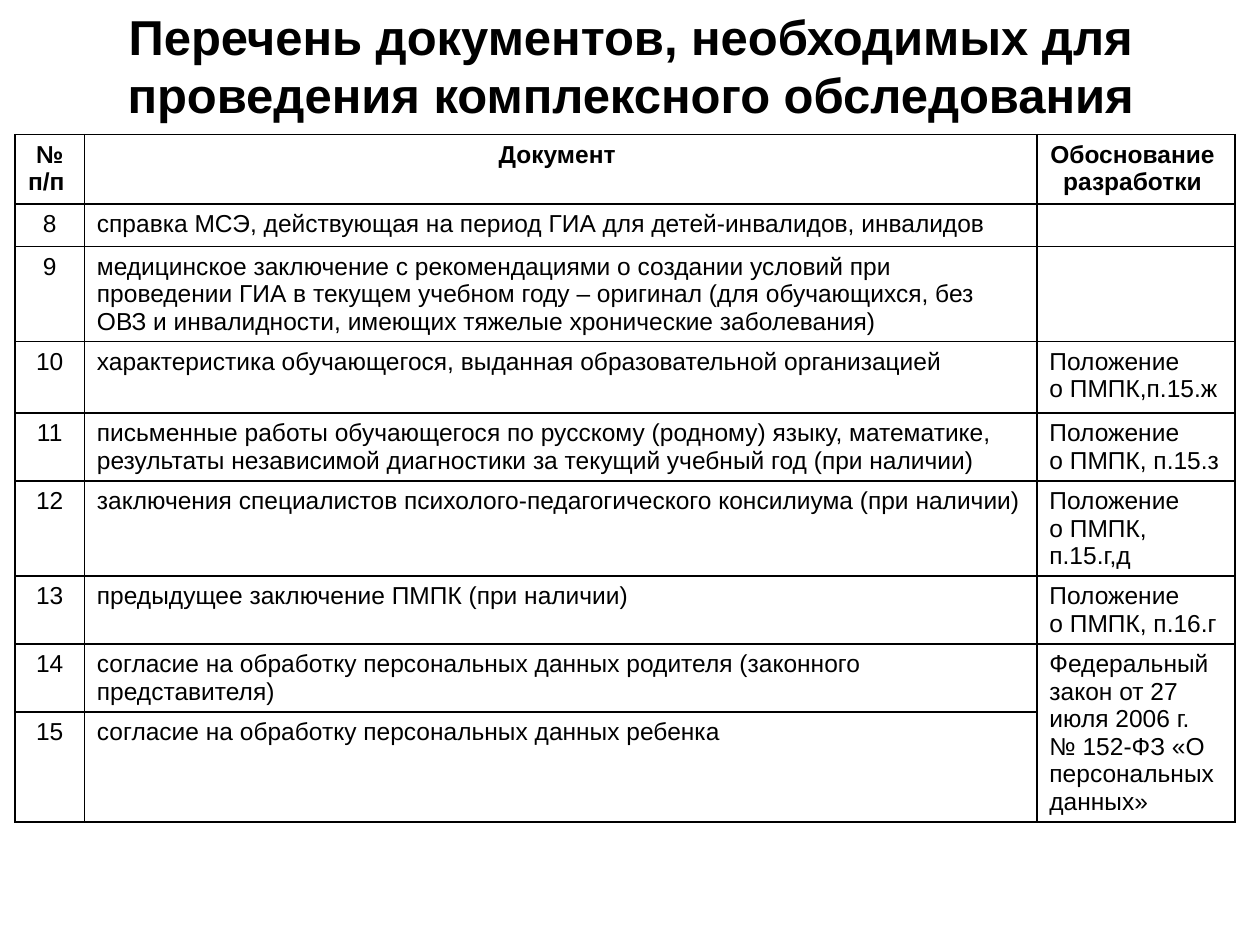
"""Build a slide listing the documents required for a comprehensive examination."""
from dataclasses import dataclass

from lxml import etree
from pptx import Presentation
from pptx.dml.color import RGBColor
from pptx.enum.text import MSO_ANCHOR, PP_ALIGN
from pptx.oxml.ns import qn
from pptx.util import Pt

CENTER, LEFT = PP_ALIGN.CENTER, PP_ALIGN.LEFT
MIDDLE = MSO_ANCHOR.MIDDLE
COLORS = {"text": "000000", "border": "000000", "fill": "FFFFFF"}
FONT = "Arial"
TITLE_SIZE, TABLE_SIZE = 28, 14
TITLE = "Перечень документов, необходимых для проведения комплексного обследования"
COLUMN_WIDTHS = (39.6, 544.3, 113.3)
TABLE_LEFT, TABLE_TOP = 8.6, 77


@dataclass
class Row:
    """Hold the texts and the height of one table row."""
    number: str
    document: str
    basis: str
    height: float
    header: bool = False


ROWS = [
    Row("№ п/п ", "Документ ", "Обоснование \nразработки ", 39.6, True),
    Row("8", "справка МСЭ, действующая на период ГИА для детей-инвалидов, инвалидов", "", 23.2),
    Row("9", "медицинское заключение с рекомендациями о создании условий при проведении ГИА "
        "в текущем учебном году – оригинал (для обучающихся, без ОВЗ и инвалидности, "
        "имеющих тяжелые хронические заболевания)", "", 54.4),
    Row("10", "характеристика обучающегося, выданная образовательной организацией",
        "Положение\nо ПМПК,п.15.ж", 40.8),
    Row("11", "письменные работы обучающегося по русскому (родному) языку, математике, "
        "результаты независимой диагностики за текущий учебный год (при наличии)",
        "Положение\nо ПМПК, п.15.з", 38.8),
    Row("12", "заключения специалистов психолого-педагогического консилиума (при наличии)",
        "Положение\nо ПМПК, п.15.г,д", 54.4),
    Row("13", "предыдущее заключение ПМПК (при наличии)", "Положение\nо ПМПК, п.16.г", 38.8),
    Row("14", "согласие на обработку персональных данных родителя (законного представителя)",
        "Федеральный закон от 27 июля 2006 г. № 152-ФЗ «О персональных данных»", 38.8),
    Row("15", "согласие на обработку персональных данных ребенка", "", 63),
]


def write_text(tf, text: str, size: float, bold: bool, align) -> None:
    """Write one formatted paragraph for each line of the text."""
    for i, line in enumerate(text.split("\n")):
        p = tf.add_paragraph() if i else tf.paragraphs[0]
        p.alignment = align
        if not line:
            p._p.get_or_add_endParaRPr().set("sz", str(size * 100))
            continue
        r = p.add_run()
        r.text = line
        for name, value in {"name": FONT, "size": Pt(size), "bold": bold}.items():
            setattr(r.font, name, value)
        r.font.color.rgb = RGBColor.from_string(COLORS["text"])


def set_borders(cell, width: float) -> None:
    """Draw solid lines on all four sides of a cell."""
    tc_pr = cell._tc.get_or_add_tcPr()
    for i, side in enumerate(("a:lnL", "a:lnR", "a:lnT", "a:lnB")):
        ln = etree.Element(qn(side), w=str(Pt(width)))
        fill = etree.SubElement(ln, qn("a:solidFill"))
        etree.SubElement(fill, qn("a:srgbClr"), val=COLORS["border"])
        tc_pr.insert(i, ln)


def add_title(s) -> None:
    """Place and fill the title placeholder."""
    sp = s.shapes.title
    box = {"left": 20.2, "top": -7.9, "width": 680.4, "height": 90}
    for name, value in box.items():
        setattr(sp, name, Pt(value))
    sp.text_frame.vertical_anchor = MIDDLE
    sp.text_frame.word_wrap = True
    write_text(sp.text_frame, TITLE, TITLE_SIZE, True, CENTER)


def add_documents(s, rows: list[Row]) -> None:
    """Add the table of documents, with the last two bases merged."""
    table = s.shapes.add_table(
        len(rows), len(COLUMN_WIDTHS), Pt(TABLE_LEFT), Pt(TABLE_TOP),
        Pt(sum(COLUMN_WIDTHS)), Pt(sum(row.height for row in rows))).table
    table.first_row = table.horz_banding = False
    for column, width in zip(table.columns, COLUMN_WIDTHS):
        column.width = Pt(width)
    for i, row in enumerate(rows):
        table.rows[i].height = Pt(row.height)
        for j, text in enumerate((row.number, row.document, row.basis)):
            cell = table.cell(i, j)
            cell.fill.solid()
            cell.fill.fore_color.rgb = RGBColor.from_string(COLORS["fill"])
            set_borders(cell, 1)
            align = CENTER if row.header or j == 0 else LEFT
            write_text(cell.text_frame, text, TABLE_SIZE, row.header, align)
    last = len(rows) - 1
    table.cell(last - 1, 2).merge(table.cell(last, 2))


def main() -> None:
    """Build and save the presentation."""
    prs = Presentation()
    prs.slide_width, prs.slide_height = Pt(720), Pt(540)
    s = prs.slides.add_slide(prs.slide_layouts[5])
    add_title(s)
    add_documents(s, ROWS)
    prs.save("out.pptx")


if __name__ == "__main__":
    main()
